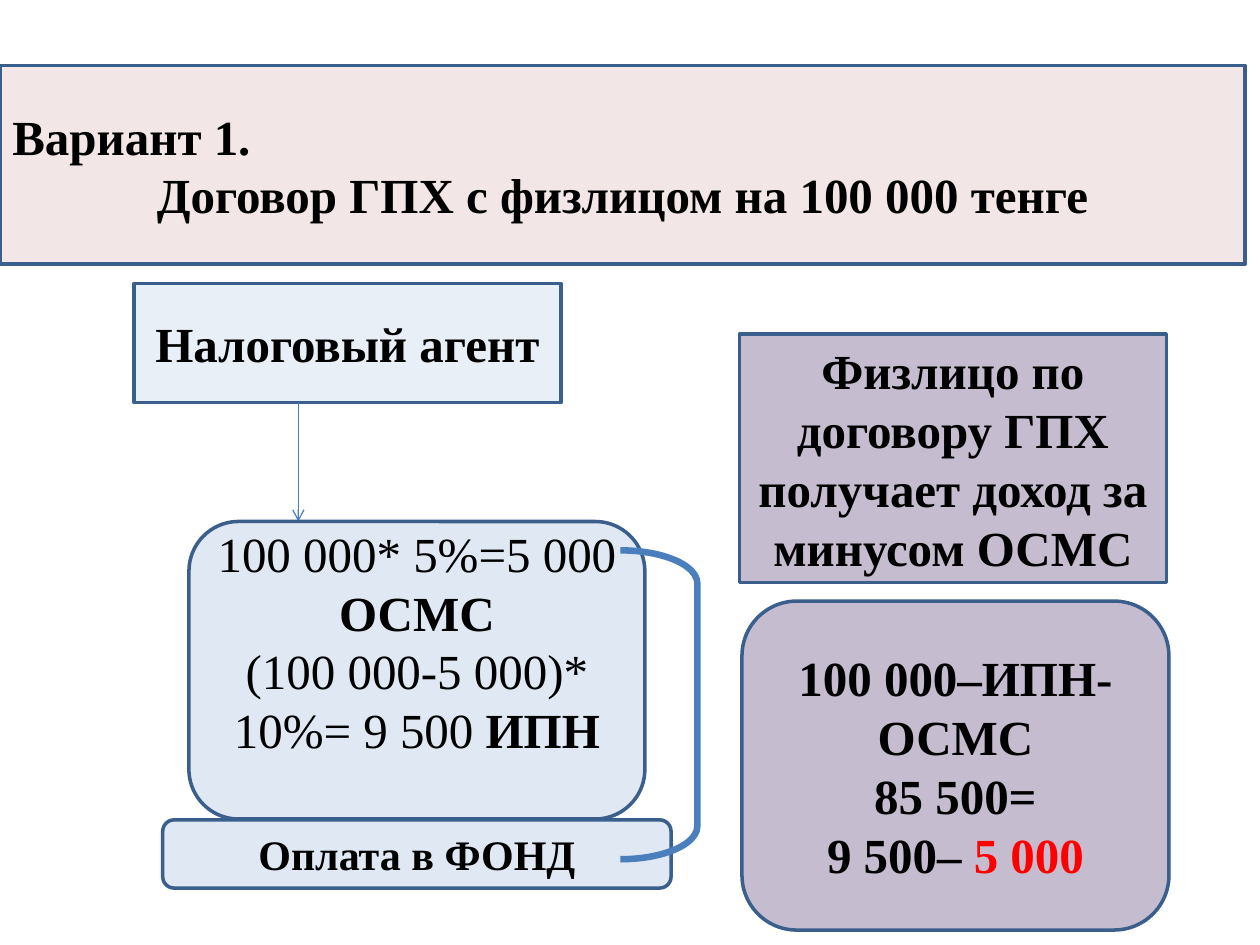
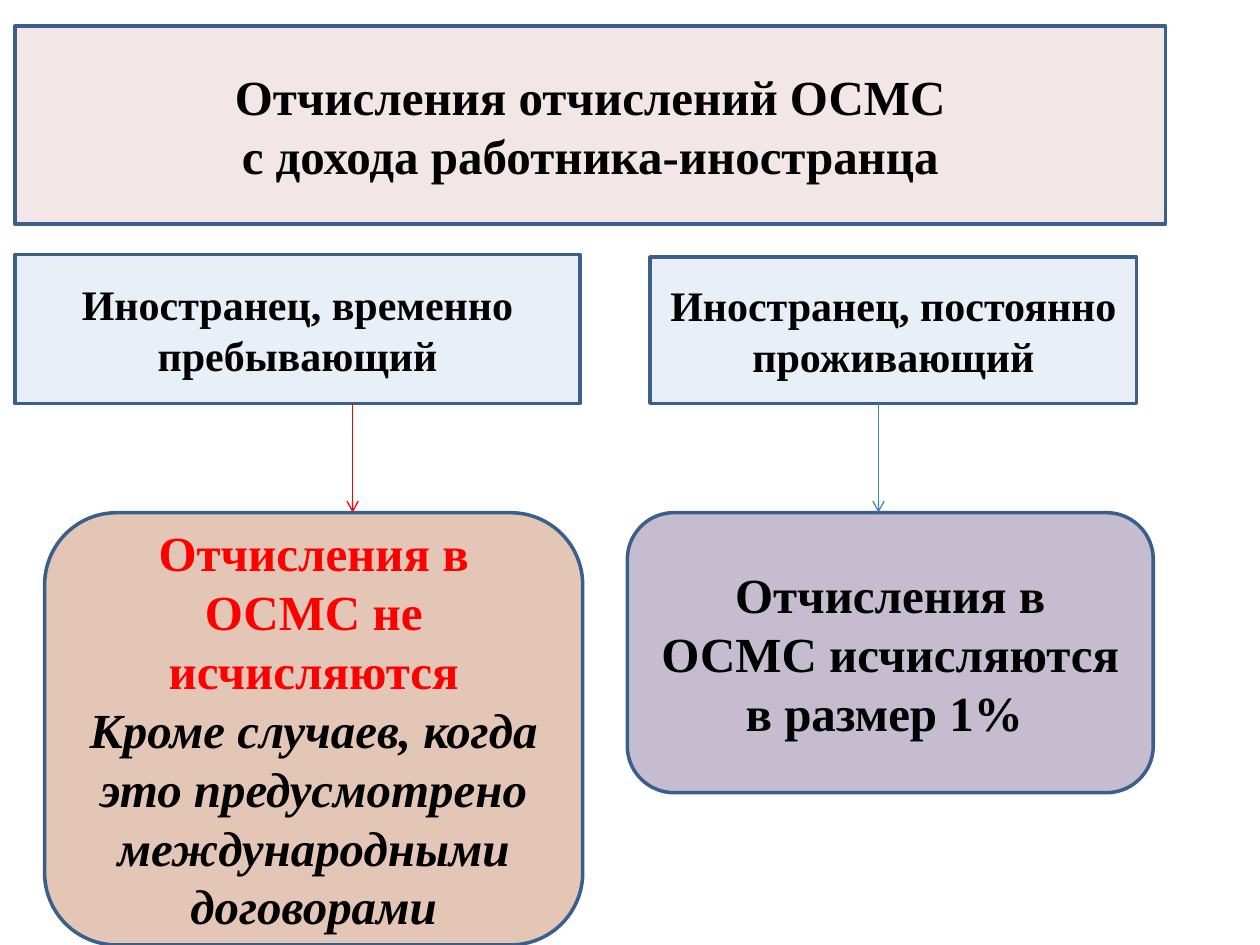
from dataclasses import dataclass
from typing import Optional

from lxml import etree
from pptx import Presentation
from pptx.dml.color import RGBColor
from pptx.enum import shapes as sh, text as tx
from pptx.oxml.ns import qn
from pptx.util import Pt

FONT = "Times New Roman"
BLACK, RED = "000000", "FF0000"
EDGE, LINK = "3A5F8C", "4B7EBC"
RECT = sh.MSO_SHAPE.RECTANGLE
ROUND = sh.MSO_SHAPE.ROUNDED_RECTANGLE


@dataclass(frozen=True)
class Tint:
    color: str
    alpha: int  # percent


ROSE = Tint("953735", 12)
SKY = Tint("4F81BD", 12)
BLUE = Tint("4F81BD", 18)
PLUM = Tint("604A7B", 36)
CLAY = Tint("B46336", 36)


@dataclass(frozen=True)
class Run:
    text: str
    bold: Optional[bool] = None
    color: Optional[str] = None


@dataclass(frozen=True)
class Para:
    runs: tuple[Run, ...]
    bold: bool = True
    italic: bool = False
    color: str = BLACK
    left: bool = False


@dataclass(frozen=True)
class Box:
    x: float
    y: float
    w: float
    h: float
    tint: Tint
    paras: tuple[Para, ...]
    kind: sh.MSO_SHAPE = RECT
    size: int = 28
    foot: float = 3.6  # bottom inset


@dataclass(frozen=True)
class Arrow:
    x: float
    top: float
    end: float
    color: str = LINK


@dataclass(frozen=True)
class Brace:
    x: float
    y: float
    w: float
    h: float
    bend: float


def rgb(code: str) -> RGBColor:
    return RGBColor.from_string(code)


def line(text: str, **style) -> Para:
    return Para((Run(text),), **style)


def write(frame, box: Box) -> None:
    frame.word_wrap = True
    frame.vertical_anchor = tx.MSO_ANCHOR.MIDDLE
    frame.margin_bottom = Pt(box.foot)
    for i, para in enumerate(box.paras):
        p = frame.paragraphs[0] if i == 0 else frame.add_paragraph()
        p.alignment = tx.PP_ALIGN.LEFT if para.left else tx.PP_ALIGN.CENTER
        p.font.name, p.font.size = FONT, Pt(box.size)
        p.font.bold, p.font.italic = para.bold, para.italic
        p.font.color.rgb = rgb(para.color)
        for run in para.runs:
            r = p.add_run()
            r.text = run.text
            if run.bold is not None:
                r.font.bold = run.bold
            if run.color:
                r.font.color.rgb = rgb(run.color)


def add_box(slide, box: Box) -> None:
    shape = slide.shapes.add_shape(
        box.kind, Pt(box.x), Pt(box.y), Pt(box.w), Pt(box.h))
    shape.shadow.inherit = False
    shape.fill.solid()
    shape.fill.fore_color.rgb = rgb(box.tint.color)
    tone = shape.element.spPr.find(qn("a:solidFill")).find(qn("a:srgbClr"))
    etree.SubElement(tone, qn("a:alpha"), val=str(box.tint.alpha * 1000))
    shape.line.color.rgb = rgb(EDGE)
    shape.line.width = Pt(2)
    write(shape.text_frame, box)


def add_arrow(slide, arrow: Arrow) -> None:
    link = slide.shapes.add_connector(
        sh.MSO_CONNECTOR.STRAIGHT,
        Pt(arrow.x), Pt(arrow.top), Pt(arrow.x), Pt(arrow.end))
    link.line.color.rgb = rgb(arrow.color)
    link.line.width = Pt(0.75)
    props = link.element.spPr
    etree.SubElement(props.find(qn("a:ln")), qn("a:tailEnd"), type="arrow")
    etree.SubElement(props, qn("a:effectLst"))


def add_brace(slide, brace: Brace) -> None:
    shape = slide.shapes.add_shape(
        sh.MSO_SHAPE.LEFT_BRACKET,
        Pt(brace.x), Pt(brace.y), Pt(brace.w), Pt(brace.h))
    shape.rotation = 180
    shape.adjustments[0] = brace.bend
    shape.shadow.inherit = False
    shape.fill.background()
    shape.line.color.rgb = rgb(LINK)
    shape.line.width = Pt(3.75)


DRAW = {Box: add_box, Arrow: add_arrow, Brace: add_brace}

# Contract with an individual
CONTRACT = (
    Box(0, 37.5, 711.5, 113.5, ROSE, (
        line("Вариант 1.", left=True),
        line("Договор ГПХ с физлицом на 100 000 тенге"))),
    Box(76.5, 162, 244, 68, SKY, (line("Налоговый агент"),)),
    Box(422.5, 191, 244, 142, PLUM, (
        line("Физлицо по договору ГПХ получает доход за минусом ОСМС"),)),
    Arrow(170.5, 230, 298),
    Box(108, 298, 260.5, 170, BLUE, (
        Para((Run("100 000* 5%=5 000 "), Run("ОСМС", bold=True)), bold=False),
        Para((Run("(100 000-5 000)* 10%= 9 500 "), Run("ИПН", bold=True)),
             bold=False)), ROUND, foot=37),
    Box(424, 343.5, 244, 188, PLUM, (
        line("100 000–ИПН-ОСМС"),
        line("85 500="),
        Para((Run("9 500– "), Run("5 000", color=RED)))), ROUND),
    Box(93, 468.5, 290.5, 39, BLUE, (line("Оплата в ФОНД"),), ROUND, 24),
    Brace(354.5, 314.5, 44, 176.5, 0.43),
)

# Income of a foreign worker
FOREIGN = (
    Box(8.5, 15, 657.5, 113, ROSE, (
        line("Отчисления отчислений ОСМС"),
        line("с дохода работника-иностранца"))),
    Box(8.5, 145.5, 323, 85, SKY, (
        line("Иностранец, временно пребывающий"),), size=24),
    Arrow(201.5, 230.5, 293, RED),
    Box(25.5, 293, 307.5, 247, CLAY, (
        line("Отчисления в ОСМС не исчисляются", color=RED),
        line("Кроме случаев, когда это предусмотрено международными "
             "договорами", italic=True)), ROUND),
    Box(371.5, 147, 278, 83.5, SKY, (
        line("Иностранец, постоянно проживающий"),), size=24),
    Box(358.5, 293, 300.5, 160, PLUM, (
        line("Отчисления в ОСМС исчисляются"),
        line("в размер 1% ")), ROUND),
    Arrow(502, 230.5, 293),
)


def main() -> None:
    deck = Presentation()
    deck.slide_width, deck.slide_height = Pt(720), Pt(540)
    for parts in (CONTRACT, FOREIGN):
        slide = deck.slides.add_slide(deck.slide_layouts[6])
        for part in parts:
            DRAW[type(part)](slide, part)
    deck.save("out.pptx")


if __name__ == "__main__":
    main()
